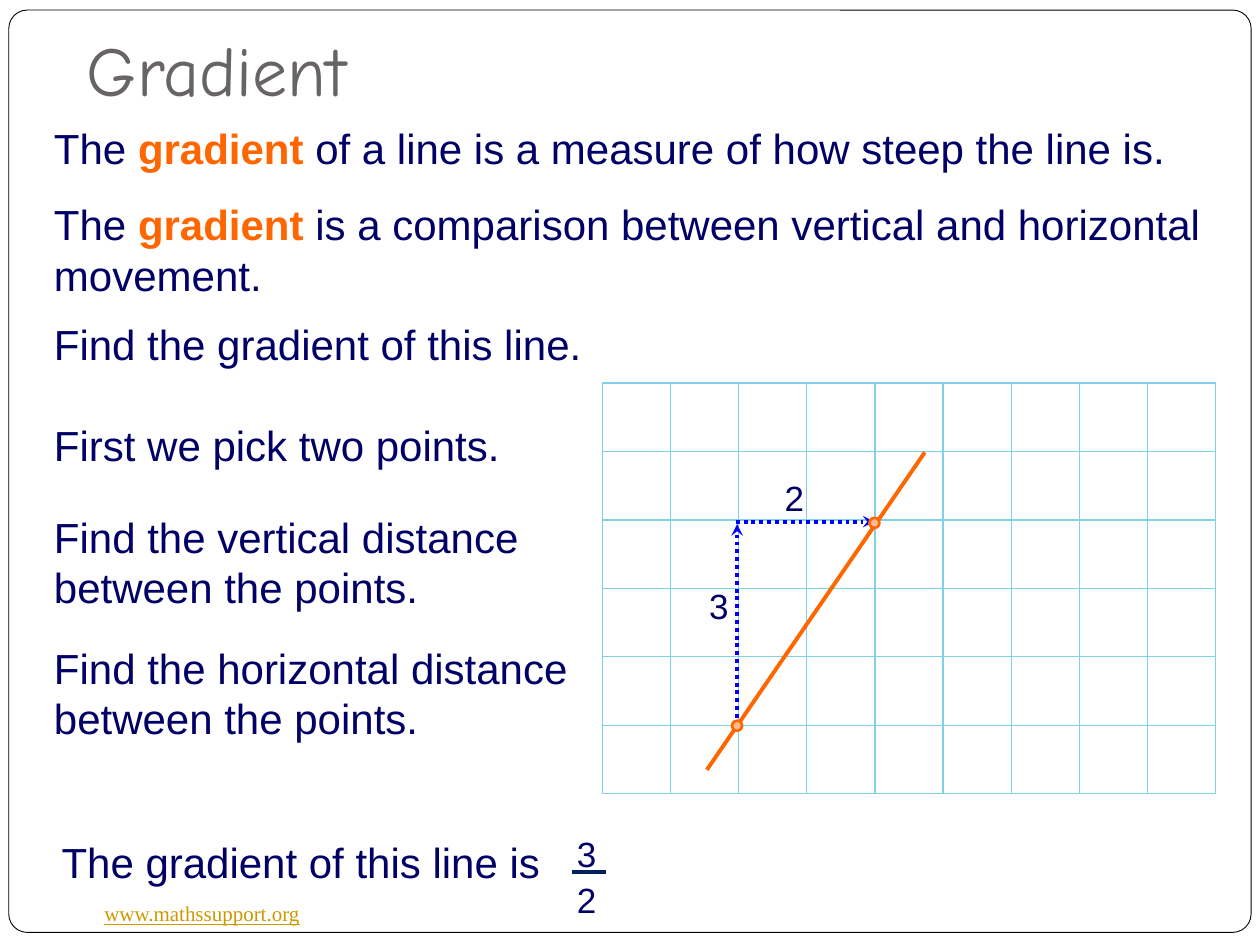
from dataclasses import dataclass

from lxml.etree import SubElement
from pptx import Presentation
from pptx.dml.color import RGBColor
from pptx.enum.dml import MSO_LINE
from pptx.enum.shapes import MSO_CONNECTOR, MSO_SHAPE
from pptx.enum.text import MSO_ANCHOR, MSO_AUTO_SIZE, PP_ALIGN
from pptx.oxml.ns import qn
from pptx.util import Inches, Pt


@dataclass(frozen=True)
class Theme:
    white: str = "FFFFFF"
    frame: str = "000000"
    title: str = "696464"
    ink: str = "010066"
    accent: str = "FF6600"
    dot: str = "FFBC8F"
    grid: str = "80D0E8"
    step: str = "0000FF"
    fraction: str = "002060"
    link: str = "CC9900"
    title_size: int = 40
    body_size: int = 24
    number_size: int = 20
    link_size: int = 12
    title_font: str = "Comic Neue"
    body_font: str = "Arial"
    link_font: str = "Times New Roman"


THEME = Theme()

# Grid of unit squares
COLUMNS, ROWS = 9, 6
GRID_LEFT, GRID_TOP, GRID_WIDTH, GRID_HEIGHT = 4.78, 3.04, 4.87, 3.26

# Text parts marked True are the highlighted term
STATEMENTS = [
    ((0.33, 0.92, 9.02, 0.5), False,
     [("The ", False), ("gradient", True),
      (" of a line is a measure of how steep the line is.", False)]),
    ((0.33, 1.53, 9.55, 0.91), True,
     [("The ", False), ("gradient", True),
      (" is a comparison between vertical and horizontal movement.", False)]),
    ((0.33, 2.48, 4.63, 0.5), False, [("Find the gradient of this line.", False)]),
    ((0.33, 3.28, 3.87, 0.5), False, [("First we pick two points.", False)]),
    ((0.33, 4.01, 4.31, 0.91), True,
     [("Find the vertical distance between the points.", False)]),
    ((0.33, 5.05, 4.31, 0.91), True,
     [("Find the horizontal distance between the points.", False)]),
    ((0.39, 6.59, 4.23, 0.5), False, [("The gradient of this line is", False)]),
]
# Rise and run beside the steps, then numerator and denominator
NUMBERS = [("3", 5.53, 4.59), ("2", 6.13, 3.73), ("3", 4.48, 6.56), ("2", 4.48, 6.92)]
POINTS = [(6.94, 4.15), (5.85, 5.76)]


def rgb(code):
    return RGBColor.from_string(code)


def set_all(target, values):
    for name, value in values.items():
        setattr(target, name, value)


def style_run(run, color, size, font, **extra):
    set_all(run.font, {"name": font, "size": Pt(size), **extra})
    run.font.color.rgb = rgb(color)


def add_outlined(shapes, kind, box, fill, line, weight):
    outlined = shapes.add_shape(kind, *map(Inches, box))
    outlined.shadow.inherit = False
    outlined.fill.solid()
    outlined.fill.fore_color.rgb = rgb(fill)
    outlined.line.color.rgb = rgb(line)
    outlined.line.width = Pt(weight)
    return outlined


def add_text(slide, box, wrap=False):
    frame = slide.shapes.add_textbox(*map(Inches, box)).text_frame
    set_all(frame, {"word_wrap": wrap, "auto_size": MSO_AUTO_SIZE.SHAPE_TO_FIT_TEXT})
    return frame.paragraphs[0]


def add_statement(slide, box, wrap, parts):
    paragraph = add_text(slide, box, wrap)
    for words, is_term in parts:
        run = paragraph.add_run()
        run.text = words
        style_run(run, THEME.accent if is_term else THEME.ink,
                  THEME.body_size, THEME.body_font, bold=is_term)


def add_label(slide, words, box, color, size, font, **extra):
    run = add_text(slide, box).add_run()
    run.text = words
    style_run(run, color, size, font, **extra)


def add_line(slide, start, end, color, weight, arrow=False):
    line = slide.shapes.add_connector(
        MSO_CONNECTOR.STRAIGHT, *map(Inches, (*start, *end)))
    line.line.color.rgb = rgb(color)
    line.line.width = Pt(weight)
    if arrow:
        line.line.dash_style = MSO_LINE.ROUND_DOT
        SubElement(line.line._get_or_add_ln(), qn("a:tailEnd"), type="stealth")
    SubElement(line._element.spPr, qn("a:effectLst"))


def add_grid(slide):
    squares = slide.shapes.add_group_shape().shapes
    width, height = GRID_WIDTH / COLUMNS, GRID_HEIGHT / ROWS
    for row in range(ROWS):
        for column in range(COLUMNS):
            box = (GRID_LEFT + column * width, GRID_TOP + row * height, width, height)
            add_outlined(squares, MSO_SHAPE.RECTANGLE, box, THEME.white, THEME.grid, 0.75)


def place_title(slide):
    title = slide.shapes.title
    set_all(title, {"left": Inches(0.59), "top": Inches(0.05),
                    "width": Inches(9), "height": Inches(0.93)})
    title.text = "Gradient"
    set_all(title.text_frame, {
        "vertical_anchor": MSO_ANCHOR.BOTTOM, "auto_size": MSO_AUTO_SIZE.NONE,
        "margin_left": Inches(0.1), "margin_right": Inches(0.1),
        "margin_top": Inches(0.05), "margin_bottom": Inches(0.1)})
    heading = title.text_frame.paragraphs[0]
    heading.alignment = PP_ALIGN.LEFT
    style_run(heading.runs[0], THEME.title, THEME.title_size, THEME.title_font)
    # Bring the title in front of the page frame
    slide.shapes._spTree.append(title._element)


def main():
    deck = Presentation()
    set_all(deck, {"slide_width": Inches(10), "slide_height": Inches(7.5)})
    slide = deck.slides.add_slide(deck.slide_layouts[5])

    # Page frame, site address and title
    page = add_outlined(slide.shapes, MSO_SHAPE.ROUNDED_RECTANGLE,
                        (0.07, 0.08, 9.86, 7.32), THEME.white, THEME.frame, 0.5)
    page.adjustments[0] = 0.02
    add_label(slide, "www.mathssupport.org", (0.73, 7.1, 1.77, 0.3),
              THEME.link, THEME.link_size, THEME.link_font, underline=True)
    add_grid(slide)
    place_title(slide)

    # Explanation
    for box, wrap, parts in STATEMENTS:
        add_statement(slide, box, wrap, parts)

    # Sloping line with its rise, run and two points
    add_line(slide, (5.61, 6.11), (7.34, 3.59), THEME.accent, 2.25)
    add_line(slide, (5.84, 4.14), (6.94, 4.14), THEME.step, 2.25, arrow=True)
    add_line(slide, (5.85, 5.76), (5.85, 4.16), THEME.step, 2.25, arrow=True)
    for x, y in POINTS:
        add_outlined(slide.shapes, MSO_SHAPE.OVAL, (x - 0.04, y - 0.04, 0.08, 0.08),
                     THEME.dot, THEME.accent, 1.5)

    # Distances and the resulting fraction
    for number, left, top in NUMBERS:
        add_label(slide, number, (left, top, 0.36, 0.44),
                  THEME.ink, THEME.number_size, THEME.body_font)
    add_line(slide, (4.54, 6.92), (4.81, 6.92), THEME.fraction, 2)

    deck.save("out.pptx")


if __name__ == "__main__":
    main()
